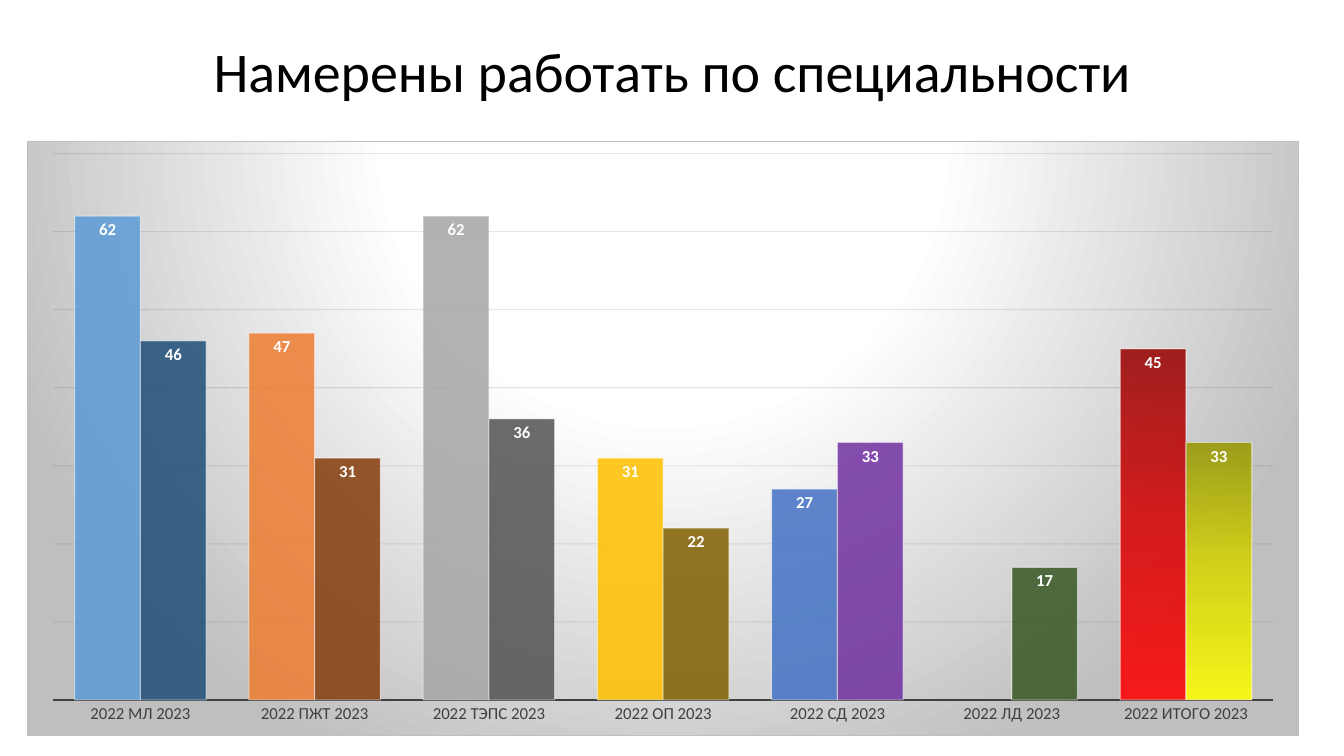
from dataclasses import dataclass

from lxml import etree
from pptx import Presentation
from pptx.chart.data import CategoryChartData
from pptx.dml.color import RGBColor
from pptx.enum.chart import XL_CHART_TYPE, XL_LABEL_POSITION, XL_TICK_MARK
from pptx.enum.text import MSO_ANCHOR, PP_ALIGN
from pptx.oxml import parse_xml
from pptx.oxml.ns import nsdecls, qn
from pptx.util import Cm, Pt

COLUMNS = XL_CHART_TYPE.COLUMN_CLUSTERED
INSIDE_END = XL_LABEL_POSITION.INSIDE_END
NO_TICK = XL_TICK_MARK.NONE
BOTTOM = MSO_ANCHOR.BOTTOM
CENTER = PP_ALIGN.CENTER


@dataclass(frozen=True)
class Theme:
    font: str = "Calibri"
    title_size: int = 40
    chart_size: int = 10
    label_size: int = 12
    text: str = "000000"
    axis: str = "404040"
    grid: str = "0D0D0D"
    border: str = "BFBFBF"
    light: str = "FFFFFF"
    backdrop: tuple = ((0, "FFFFFF"), (39, "FFFFFF"), (100, "BFBFBF"))
    total_2022: tuple = ((0, "970000"), (50, "D70000"), (100, "FF0000"))
    total_2023: tuple = ((0, "979700"), (50, "D7D700"), (100, "FFFF00"))
    columns_2022: tuple = ("5B9BD5", "ED7D31", "A5A5A5", "FFC000", "4472C4", "5B9BD5", total_2022)
    columns_2023: tuple = ("1F4E79", "843C0B", "525252", "806000", "7030A0", "385723", total_2023)


THEME = Theme()
SPECIALTIES = ("МЛ", "ПЖТ", "ТЭПС", "ОП", "СД", "ЛД", "ИТОГО")
SHARES = {
    "Series 1": ((62, 47, 62, 31, 27, None, 45), THEME.columns_2022),
    "Series 2": ((46, 31, 36, 22, 33, 17, 33), THEME.columns_2023),
}
DOWNWARD = '<a:lin ang="5400000" scaled="0"/>'
FROM_ABOVE = ('<a:path path="circle">'
              '<a:fillToRect l="50000" t="-80000" r="50000" b="180000"/></a:path>')


def style_font(font, size, color, bold=False):
    font.name = THEME.font
    font.size = Pt(size)
    font.bold = bold
    font.color.rgb = RGBColor.from_string(color)


def style_line(line, color, width):
    line.color.rgb = RGBColor.from_string(color)
    line.width = Pt(width)


def set_alpha(color, percent):
    etree.SubElement(color, qn("a:alpha")).set("val", str(percent * 1000))


def gradient_xml(stops, direction):
    stop_xml = "".join(f'<a:gs pos="{position * 1000}"><a:srgbClr val="{color}"/></a:gs>'
                       for position, color in stops)
    return f'<a:gradFill {nsdecls("a")}><a:gsLst>{stop_xml}</a:gsLst>{direction}</a:gradFill>'


def add_text(slide, box, text, *, size, color, align, anchor, line_spacing):
    area = slide.shapes.add_textbox(*box).text_frame
    area.word_wrap = True
    area.vertical_anchor = anchor
    paragraph = area.paragraphs[0]
    paragraph.alignment = align
    paragraph.line_spacing = line_spacing
    run = paragraph.add_run()
    run.text = text
    style_font(run.font, size, color)


def paint_column(column, paint):
    """Fill one column with a plain colour or with gradient stops."""
    fill = column.format.fill
    if isinstance(paint, str):
        fill.solid()
        fill.fore_color.rgb = RGBColor.from_string(paint)
    else:
        fill.background()
        properties = fill._xPr
        properties.replace(properties.find(qn("a:noFill")),
                           parse_xml(gradient_xml(paint, DOWNWARD)))
    style_line(column.format.line, THEME.light, 0.75)


def style_series(series, values, paints):
    series.smooth = False if hasattr(series, "smooth") else None
    series.invert_if_negative = False
    paint_column(series, paints[0])
    for index, (value, paint) in enumerate(zip(values, paints)):
        if value is not None:
            paint_column(series.points[index], paint)
    for properties in series._element.iter(qn("c:spPr")):
        for color in properties.iter(qn("a:srgbClr")):
            outlined = next(color.iterancestors(qn("a:ln")), None) is not None
            set_alpha(color, 50 if outlined else 85)
    labels = series.data_labels
    labels.show_value = True
    labels.position = INSIDE_END
    style_font(labels.font, THEME.label_size, THEME.light, bold=True)


def style_axes(chart):
    specialties = chart.category_axis
    specialties.major_tick_mark = specialties.minor_tick_mark = NO_TICK
    style_font(specialties.tick_labels.font, THEME.label_size, THEME.axis)
    style_line(specialties.format.line, THEME.axis, 1.5)

    share = chart.value_axis
    share.visible = False
    share.minimum_scale, share.maximum_scale, share.major_unit = 0, 70, 10
    share.has_major_gridlines = True
    gridlines = share.major_gridlines
    style_line(gridlines.format.line, THEME.grid, 0.75)
    for color in gridlines._xAx.find(qn("c:majorGridlines")).iter(qn("a:srgbClr")):
        set_alpha(color, 10)


def style_chart_area(chart):
    """Give the whole chart its backdrop and border, and fix the plot inside it."""
    frame = chart._chartSpace.find(qn("c:chart"))
    frame.addnext(parse_xml(
        f'<c:spPr {nsdecls("c", "a")}>{gradient_xml(THEME.backdrop, FROM_ABOVE)}'
        f'<a:ln w="{Pt(0.75)}"><a:solidFill><a:srgbClr val="{THEME.border}"/>'
        '</a:solidFill></a:ln></c:spPr>'))
    plot_area = frame.find(qn("c:plotArea"))
    for automatic in plot_area.findall(qn("c:layout")):
        plot_area.remove(automatic)
    edges = "".join(f'<c:{edge}Mode val="edge"/>' for edge in "xy")
    extent = "".join(f'<c:{name} val="{part}"/>' for name, part in
                     (("x", 0.02), ("y", 0.02), ("w", 0.96), ("h", 0.92)))
    plot_area.insert(0, parse_xml(
        f'<c:layout {nsdecls("c")}><c:manualLayout><c:layoutTarget val="inner"/>'
        f'{edges}{extent}</c:manualLayout></c:layout>'))


def add_share_chart(slide, box):
    data = CategoryChartData()
    data.categories = [f"2022 {specialty} 2023" for specialty in SPECIALTIES]
    for name, (values, _) in SHARES.items():
        data.add_series(name, values)
    chart = slide.shapes.add_chart(COLUMNS, *box, data).chart
    chart.has_title = chart.has_legend = False
    style_font(chart.font, THEME.chart_size, THEME.text)
    columns = chart.plots[0]
    columns.vary_by_categories = False
    columns.gap_width, columns.overlap = 65, 0
    for series, (values, paints) in zip(columns.series, SHARES.values()):
        style_series(series, values, paints)
    style_axes(chart)
    style_chart_area(chart)


def main():
    deck = Presentation()
    deck.slide_width, deck.slide_height = Cm(33.87), Cm(19.05)
    slide = deck.slides.add_slide(deck.slide_layouts[6])
    add_text(slide, (Cm(4.24), Cm(0.79), Cm(25.4), Cm(1.98)),
             "Намерены работать по специальности", size=THEME.title_size,
             color=THEME.text, align=CENTER, anchor=BOTTOM, line_spacing=0.9)
    add_share_chart(slide, (Cm(0.69), Cm(3.56), Cm(32.05), Cm(14.99)))
    deck.save("out.pptx")


if __name__ == "__main__":
    main()
